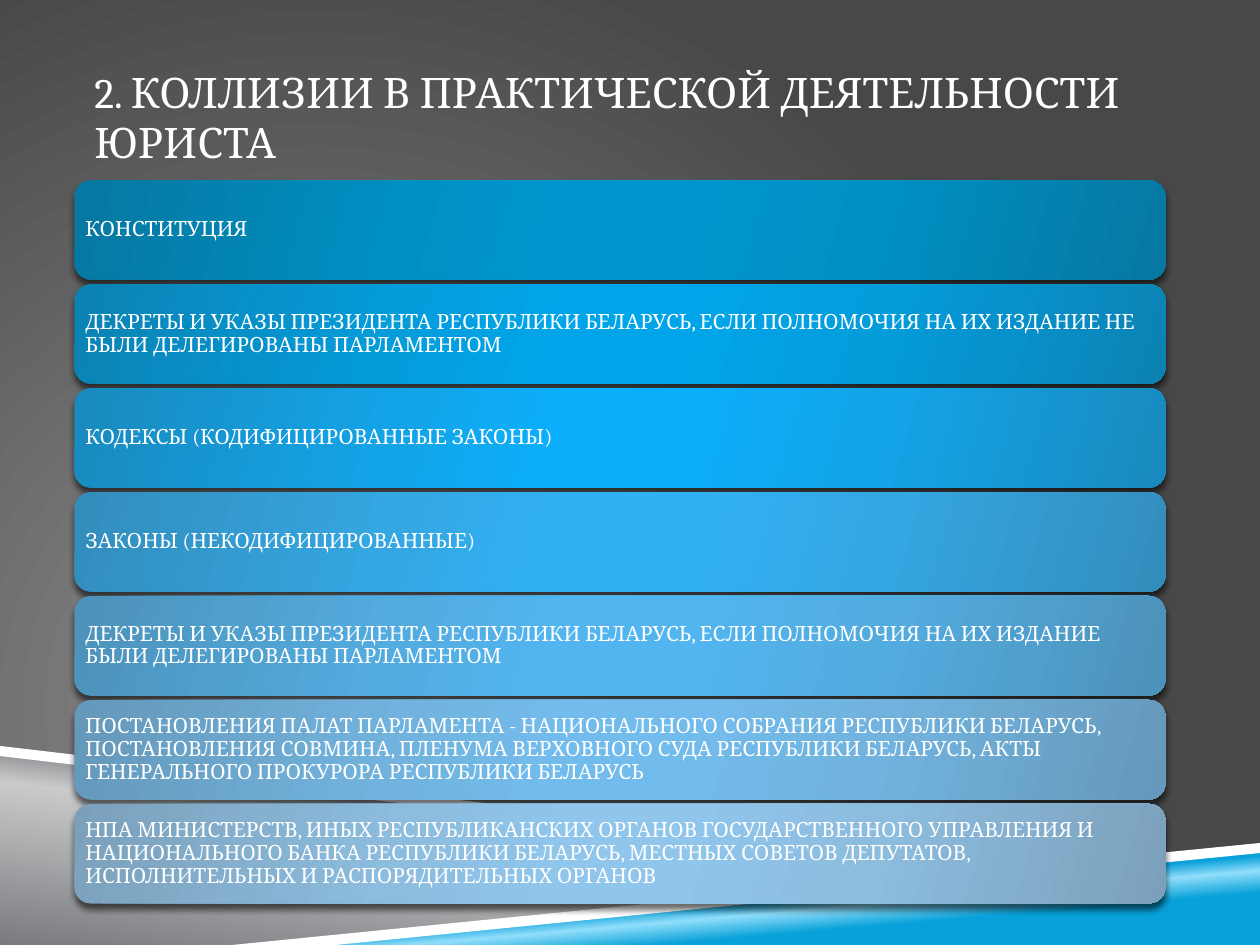
from lxml import etree
from pptx import Presentation
from pptx.dml.color import RGBColor
from pptx.enum.shapes import MSO_SHAPE
from pptx.enum.text import MSO_ANCHOR, PP_ALIGN
from pptx.oxml.ns import qn
from pptx.util import Inches, Pt

ROUNDED = MSO_SHAPE.ROUNDED_RECTANGLE
MIDDLE = MSO_ANCHOR.MIDDLE
LEFT = PP_ALIGN.LEFT

WHITE = RGBColor(0xFF, 0xFF, 0xFF)
BLACK = RGBColor(0x00, 0x00, 0x00)
CHARCOAL = RGBColor(0x48, 0x48, 0x48)
GRAY = RGBColor(0x8D, 0x8D, 0x8D)
STEEL = RGBColor(0x79, 0x7B, 0x7E)
SILVER = RGBColor(0xC9, 0xCA, 0xCB)
BLUE = RGBColor(0x08, 0xA1, 0xD9)
SKY = RGBColor(0x91, 0xDF, 0xFB)

TITLE = "2. КОЛЛИЗИИ В ПРАКТИЧЕСКОЙ ДЕЯТЕЛЬНОСТИ ЮРИСТА"

# Text, then the edge, inner and centre colours of each bar
BARS = [
    ("КОНСТИТУЦИЯ",
     RGBColor(0x06, 0x78, 0xA1), RGBColor(0x00, 0x8F, 0xC3), RGBColor(0x00, 0x95, 0xCC)),
    ("ДЕКРЕТЫ И УКАЗЫ ПРЕЗИДЕНТА РЕСПУБЛИКИ БЕЛАРУСЬ, ЕСЛИ ПОЛНОМОЧИЯ НА ИХ "
     "ИЗДАНИЕ НЕ БЫЛИ ДЕЛЕГИРОВАНЫ ПАРЛАМЕНТОМ",
     RGBColor(0x0C, 0x82, 0xB3), RGBColor(0x04, 0x9C, 0xDB), RGBColor(0x00, 0xA5, 0xE9)),
    ("КОДЕКСЫ (КОДИФИЦИРОВАННЫЕ ЗАКОНЫ)",
     RGBColor(0x19, 0x8A, 0xBE), RGBColor(0x13, 0xA4, 0xE8), RGBColor(0x0C, 0xAF, 0xFB)),
    ("ЗАКОНЫ (НЕКОДИФИЦИРОВАННЫЕ)",
     RGBColor(0x33, 0x8D, 0xBC), RGBColor(0x34, 0xA7, 0xE3), RGBColor(0x30, 0xB1, 0xF4)),
    ("ДЕКРЕТЫ И УКАЗЫ ПРЕЗИДЕНТА РЕСПУБЛИКИ БЕЛАРУСЬ, ЕСЛИ ПОЛНОМОЧИЯ НА ИХ "
     "ИЗДАНИЕ БЫЛИ ДЕЛЕГИРОВАНЫ ПАРЛАМЕНТОМ",
     RGBColor(0x4D, 0x92, 0xBA), RGBColor(0x53, 0xAC, 0xE0), RGBColor(0x52, 0xB5, 0xF0)),
    ("ПОСТАНОВЛЕНИЯ ПАЛАТ ПАРЛАМЕНТА - НАЦИОНАЛЬНОГО СОБРАНИЯ РЕСПУБЛИКИ "
     "БЕЛАРУСЬ, ПОСТАНОВЛЕНИЯ СОВМИНА, ПЛЕНУМА ВЕРХОВНОГО СУДА РЕСПУБЛИКИ "
     "БЕЛАРУСЬ, АКТЫ ГЕНЕРАЛЬНОГО ПРОКУРОРА РЕСПУБЛИКИ БЕЛАРУСЬ",
     RGBColor(0x65, 0x98, 0xBA), RGBColor(0x71, 0xB3, 0xDE), RGBColor(0x72, 0xBC, 0xED)),
    ("НПА МИНИСТЕРСТВ, ИНЫХ РЕСПУБЛИКАНСКИХ ОРГАНОВ ГОСУДАРСТВЕННОГО "
     "УПРАВЛЕНИЯ И НАЦИОНАЛЬНОГО БАНКА РЕСПУБЛИКИ БЕЛАРУСЬ, МЕСТНЫХ СОВЕТОВ "
     "ДЕПУТАТОВ, ИСПОЛНИТЕЛЬНЫХ И РАСПОРЯДИТЕЛЬНЫХ ОРГАНОВ",
     RGBColor(0x7B, 0xA0, 0xBB), RGBColor(0x8C, 0xBC, 0xDE), RGBColor(0x90, 0xC5, 0xEC)),
]
BAR_TOP, LAST_BAR_TOP = 1.43, 6.38
BAR_PITCH = (LAST_BAR_TOP - BAR_TOP) / (len(BARS) - 1)


def add_xml(parent, tag, **attributes):
    child = etree.SubElement(parent, qn(tag))
    for name, value in attributes.items():
        child.set(name, str(value))
    return child


def add_color(parent, color):
    return add_xml(parent, "a:srgbClr", val=color)


class SlideBuilder:
    font = "Cambria"
    color = WHITE

    def __init__(self, slide):
        self.slide = slide

    def gradient(self, fill, owner, stops, angle=None):
        """Linear at an angle in degrees, or circular when there is none."""
        fill.gradient()
        grad = next(owner.iter(qn("a:gradFill")))
        for child in list(grad):
            grad.remove(child)
        stop_list = add_xml(grad, "a:gsLst")
        for position, color in stops:
            add_color(add_xml(stop_list, "a:gs", pos=position * 1000), color)
        if angle is None:
            circle = add_xml(grad, "a:path", path="circle")
            add_xml(circle, "a:fillToRect", l=50000, t=100000, r=100000, b=50000)
        else:
            add_xml(grad, "a:lin", ang=angle * 60000, scaled=0)

    def background(self, stops):
        self.gradient(self.slide.background.fill, self.slide.element, stops)

    def polygon(self, points, color=None, stops=None, angle=0):
        corners = [(Inches(x), Inches(y)) for x, y in points]
        builder = self.slide.shapes.build_freeform(*corners[0])
        builder.add_line_segments(corners[1:], close=True)
        sp = builder.convert_to_shape()
        sp.shadow.inherit = False
        sp.line.fill.background()
        if stops:
            self.gradient(sp.fill, sp.element, stops, angle)
        else:
            sp.fill.solid()
            sp.fill.fore_color.rgb = color

    def set_text(self, sp, text, size, side, spacing):
        tf = sp.text_frame
        tf.word_wrap = True
        tf.vertical_anchor = MIDDLE
        tf.margin_left = tf.margin_right = Inches(side)
        tf.margin_top = tf.margin_bottom = Inches(0.05)
        tf.text = text
        p = tf.paragraphs[0]
        p.alignment = LEFT
        p.line_spacing = spacing
        r = p.runs[0]
        r.font.name = self.font
        r.font.size = Pt(size)
        r.font.color.rgb = self.color

    def title(self, text, left, top, width, height):
        sp = self.slide.shapes.add_textbox(
            Inches(left), Inches(top), Inches(width), Inches(height))
        self.set_text(sp, text, 24, 0, 1.0)

    def bar(self, text, top, edge, inner, centre):
        sp = self.slide.shapes.add_shape(
            ROUNDED, Inches(0.59), Inches(top), Inches(8.66), Inches(0.79))
        sp.line.fill.background()
        stops = [(0, edge), (30, inner), (45, centre),
                 (55, centre), (73, inner), (100, edge)]
        self.gradient(sp.fill, sp.element, stops, 16)
        self.drop_shadow(sp)
        self.set_text(sp, text, 12, 0.05, 0.9)

    def drop_shadow(self, sp):
        sp.shadow.inherit = False
        effects = next(sp.element.iter(qn("a:effectLst")))
        shadow = add_xml(effects, "a:outerShdw", blurRad=Pt(4), dist=Pt(3),
                         dir=90 * 60000, rotWithShape=0)
        add_xml(add_color(shadow, BLACK), "a:alpha", val=58000)


def main():
    prs = Presentation()
    prs.slide_width, prs.slide_height = Inches(10), Inches(7.5)
    s = SlideBuilder(prs.slides.add_slide(prs.slide_layouts[6]))

    # Background and corner sheets
    s.background([(0, GRAY), (100, CHARCOAL)])
    s.polygon([(0, 5.97), (7.92, 6.92), (2, 7.5), (0, 7.5)],
              stops=[(0, STEEL), (52, SILVER), (66, STEEL)], angle=277)
    s.polygon([(1.98, 7.5), (10, 6.72), (10, 7.5)],
              stops=[(28, BLUE), (40, SKY), (48, BLUE)], angle=265)

    # White edges of the sheets
    s.polygon([(0, 5.92), (0, 6), (7.9, 6.93), (8.32, 6.9)], WHITE)
    s.polygon([(10, 6.69), (1.84, 7.5), (2.66, 7.5), (10, 6.77)], WHITE)

    # Title
    s.title(TITLE, 0.75, 0.3, 8.5, 1.25)

    # Hierarchy of legal acts
    for i, (text, *colors) in enumerate(BARS):
        s.bar(text, BAR_TOP + i * BAR_PITCH, *colors)

    prs.save("out.pptx")


if __name__ == "__main__":
    main()
